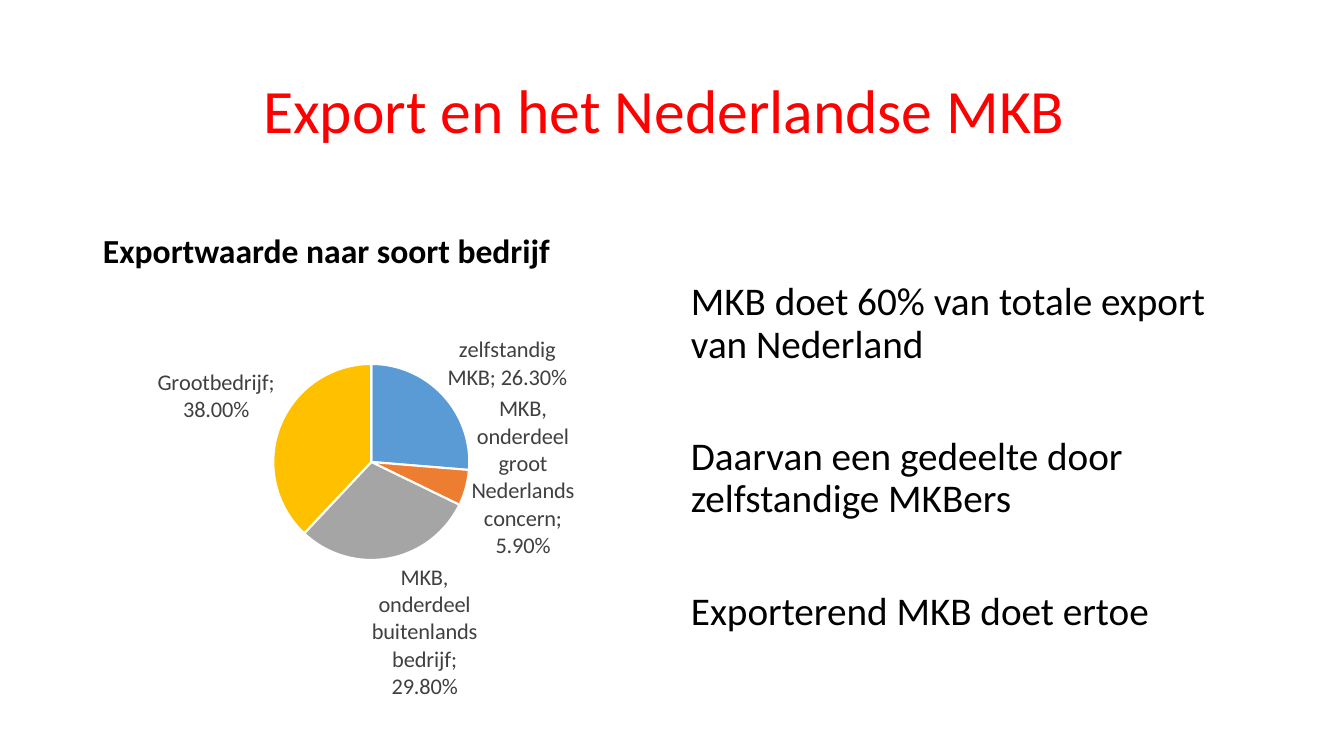
"""Build a slide on Dutch SME exports with a pie chart and three statements."""
import copy

from lxml import etree
from pptx import Presentation
from pptx import util as u
from pptx.chart.data import CategoryChartData
from pptx.dml.color import RGBColor
from pptx.enum import chart as ch, text
from pptx.oxml import ns

FONT = "Calibri"
COLORS = {"title": "FF0000", "body": "000000", "label": "404040", "border": "FFFFFF"}
TEXTS = [
    {"lines": ["Export en het Nederlandse MKB"], "area": (85, 41, 1159, 146),
     "size": 44, "color": "title", "bold": False, "gap": 0,
     "align": text.PP_ALIGN.CENTER, "anchor": text.MSO_ANCHOR.MIDDLE},
    {"lines": ["Exportwaarde naar soort bedrijf"], "area": (93, 185, 568, 91),
     "size": 24, "color": "body", "bold": True, "gap": 10,
     "align": text.PP_ALIGN.LEFT, "anchor": text.MSO_ANCHOR.BOTTOM},
    {"lines": ["MKB doet 60% van totale export van Nederland",
               "Daarvan een gedeelte door zelfstandige MKBers",
               "Exporterend MKB doet ertoe"], "area": (681, 277, 572, 406),
     "size": 28, "color": "body", "bold": False, "gap": 50,
     "align": text.PP_ALIGN.LEFT, "anchor": text.MSO_ANCHOR.TOP},
]
EXPORT_SHARES = [
    ("zelfstandig MKB", 0.263, "5B9BD5"),
    ("MKB, onderdeel groot Nederlands concern", 0.059, "ED7D31"),
    ("MKB, onderdeel buitenlands bedrijf", 0.298, "A5A5A5"),
    ("Grootbedrijf", 0.38, "FFC000"),
]
OUTSIDE_LABEL = 3
CHART_AREA = (34, 270, 615, 477)
PIE_AREA = (273, 364, 196, 196)


def px(length):
    return u.Inches(length / 100.8)


def style_font(font, size, color, bold=False):
    font.name, font.size, font.bold = FONT, u.Pt(size), bold
    font.color.rgb = RGBColor.from_string(COLORS[color])


def add_text(page, item):
    frame = page.shapes.add_textbox(*map(px, item["area"])).text_frame
    frame.word_wrap = True
    frame.vertical_anchor = item["anchor"]
    frame.text = "\n".join(item["lines"])
    for index, para in enumerate(frame.paragraphs):
        para.alignment = item["align"]
        para.line_spacing = 0.9
        para.space_before = u.Pt(item["gap"] if index else min(item["gap"], 10))
        for span in para.runs:
            style_font(span.font, item["size"], item["color"], item["bold"])


def place_pie(chart):
    left, top, width, height = CHART_AREA
    pie_left, pie_top, pie_width, pie_height = PIE_AREA
    area = chart.plots[0]._element.getparent()
    for old in area.findall(ns.qn("c:layout")):
        area.remove(old)
    layout = etree.Element(ns.qn("c:layout"))
    area.insert(0, layout)
    manual = etree.SubElement(layout, ns.qn("c:manualLayout"))
    settings = [("layoutTarget", "inner"), ("xMode", "edge"), ("yMode", "edge"),
                ("x", round((pie_left - left) / width, 3)),
                ("y", round((pie_top - top) / height, 3)),
                ("w", round(pie_width / width, 3)),
                ("h", round(pie_height / height, 3))]
    for name, value in settings:
        etree.SubElement(manual, ns.qn(f"c:{name}")).set("val", str(value))


def add_labels(series):
    labels = series.data_labels
    labels.show_category_name = labels.show_value = True
    labels.show_percentage = labels.show_legend_key = False
    labels.number_format, labels.number_format_is_linked = "0.00%", False
    labels.position = ch.XL_LABEL_POSITION.BEST_FIT
    style_font(labels.font, 16, "label")
    group = labels._element
    separator = etree.Element(ns.qn("c:separator"))
    separator.text = "; "
    group.find(ns.qn("c:showBubbleSize")).addnext(separator)

    single = etree.Element(ns.qn("c:dLbl"))
    etree.SubElement(single, ns.qn("c:idx")).set("val", str(OUTSIDE_LABEL))
    for child in group:
        if child.tag != ns.qn("c:showLeaderLines"):
            single.append(copy.deepcopy(child))
    single.find(ns.qn("c:dLblPos")).set("val", "outEnd")
    group.insert(0, single)


def add_pie(page):
    data = CategoryChartData(number_format="0.00%")
    data.categories = [name for name, _, _ in EXPORT_SHARES]
    data.add_series("Series 1", [share for _, share, _ in EXPORT_SHARES])
    chart = page.shapes.add_chart(ch.XL_CHART_TYPE.PIE, *map(px, CHART_AREA), data).chart
    chart.has_title = chart.has_legend = False
    style_font(chart.font, 10, "body")
    plot = chart.plots[0]
    plot.vary_by_categories = True
    for index, (_, _, color) in enumerate(EXPORT_SHARES):
        point = plot.series[0].points[index].format
        point.fill.solid()
        point.fill.fore_color.rgb = RGBColor.from_string(color)
        point.line.color.rgb = RGBColor.from_string(COLORS["border"])
        point.line.width = u.Pt(1.5)
    add_labels(plot.series[0])
    place_pie(chart)


def main():
    deck = Presentation()
    deck.slide_width, deck.slide_height = px(1344), px(756)
    page = deck.slides.add_slide(deck.slide_layouts[6])
    for item in TEXTS:
        add_text(page, item)
    add_pie(page)
    deck.save("out.pptx")


if __name__ == "__main__":
    main()
